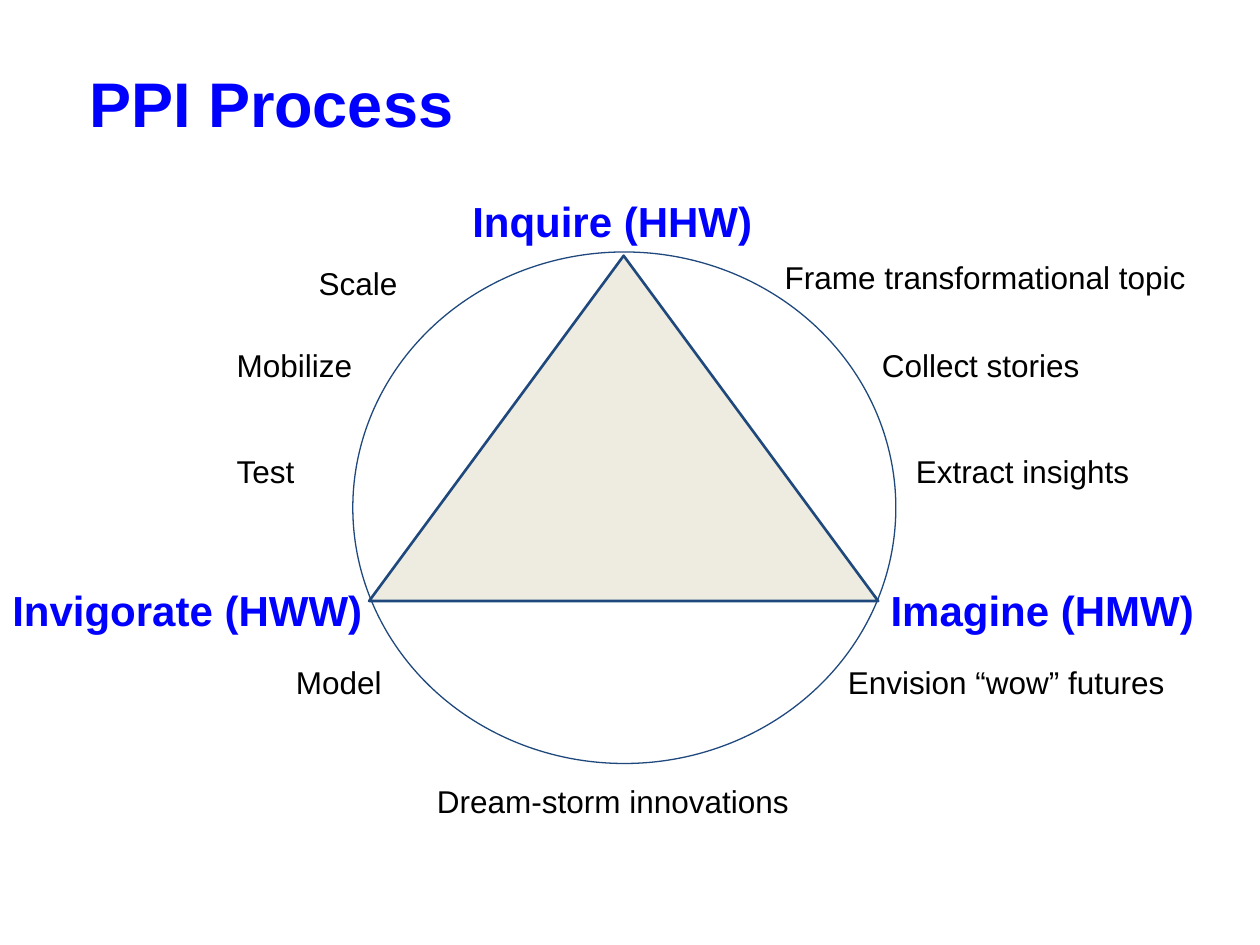
from pptx import Presentation
from pptx.dml.color import RGBColor as RGB
from pptx.enum.shapes import MSO_SHAPE as Kind
from pptx.util import Inches, Pt

# Grid of 100 columns by 75 rows, each cell a tenth of an inch
CELL = Inches(0.1)
COLS, ROWS = 100, 75
BLUE, NAVY, SAND, BLACK = "0000FF", "1F497D", "EEECE1", "000000"

# Label: text, column, row, columns wide, rows high
STAGES = [
    ("Inquire (HHW)", 36.5, 15, 26.2, 4),
    ("Imagine (HMW)", 69.7, 45.9, 28.4, 4.7),
    ("Invigorate (HWW)", 0, 45.9, 30.4, 4),
]
STEPS = [
    ("Frame transformational topic", 61.3, 20, 36.7, 3.5),
    ("Collect stories", 69, 27, 18.9, 3.1),
    ("Extract insights", 71.7, 35.4, 20.9, 5.2),
    ("Envision “wow” futures", 66.3, 52.1, 34.1, 4.7),
    ("Dream-storm innovations", 33.7, 61.6, 31, 4.7),
    ("Model", 22.5, 52.1, 9, 6),
    ("Test", 17.8, 35.4, 7.4, 4),
    ("Mobilize", 17.8, 27, 12.6, 4),
    ("Scale", 24.3, 20.5, 10.4, 4),
]


def paint(fmt, code):
    fmt.solid()
    fmt.fore_color.rgb = RGB.from_string(code)


def place(*cells):
    return [round(n * CELL) for n in cells]


def label(slide, text, col, row, wide, high, size, color, bold=False):
    frame = slide.shapes.add_textbox(*place(col, row, wide, high)).text_frame
    frame.word_wrap = True
    run = frame.paragraphs[0].add_run()
    run.text = text
    font = run.font
    font.name, font.size, font.bold = "Arial", Pt(size), bold
    paint(font.fill, color)


def figure(slide, kind, col, row, wide, high, width, fill=None):
    shape = slide.shapes.add_shape(kind, *place(col, row, wide, high))
    shape.shadow.inherit = False
    if fill:
        paint(shape.fill, fill)
    else:
        shape.fill.background()
    paint(shape.line.fill, NAVY)
    shape.line.width = Pt(width)


def main():
    deck = Presentation()
    deck.slide_width, deck.slide_height = place(COLS, ROWS)
    slide = deck.slides.add_slide(deck.slide_layouts[6])

    # Title
    label(slide, "PPI Process", 6.1, 4.6, 80.8, 7.5, 36, BLUE, True)

    # Cycle with the triangle inside
    figure(slide, Kind.OVAL, 28, 20, 43.1, 40.6, 0.75)
    figure(slide, Kind.ISOSCELES_TRIANGLE, 29.3, 20.3, 40.4, 27.4, 1.5, SAND)

    # Stages at the corners, steps around the cycle
    for stage in STAGES:
        label(slide, *stage, 24, BLUE, True)
    for step in STEPS:
        label(slide, *step, 18, BLACK)

    deck.save("out.pptx")


if __name__ == "__main__":
    main()
